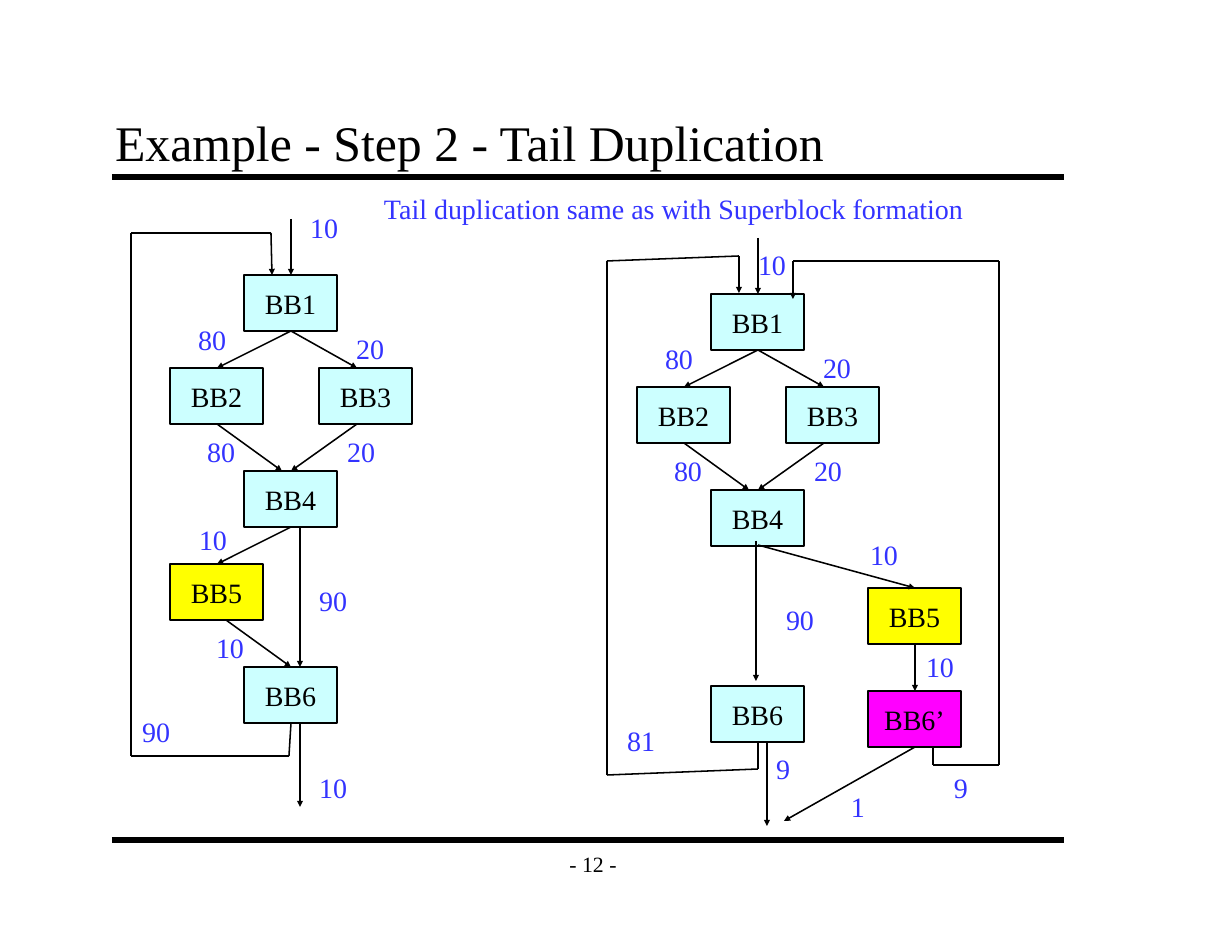
from itertools import pairwise

from lxml import etree
from pptx import Presentation
from pptx.dml.color import RGBColor
from pptx.enum.shapes import MSO_CONNECTOR, MSO_SHAPE
from pptx.enum.text import MSO_ANCHOR, PP_ALIGN
from pptx.oxml.ns import qn
from pptx.util import Pt

RECTANGLE = MSO_SHAPE.RECTANGLE
STRAIGHT = MSO_CONNECTOR.STRAIGHT
LEFT, CENTER = PP_ALIGN.LEFT, PP_ALIGN.CENTER
TOP, MIDDLE, BOTTOM = MSO_ANCHOR.TOP, MSO_ANCHOR.MIDDLE, MSO_ANCHOR.BOTTOM

PX = 914400 // 112
FONT = "Times New Roman"
BLACK, BLUE = "000000", "3333FF"
CYAN, YELLOW, MAGENTA = "CCFFFF", "FFFF00", "FF00FF"
BLOCK_WIDTH, BLOCK_HEIGHT = 93, 56
LABEL_HEIGHT = 45

TITLE = "Example - Step 2 - Tail Duplication"
REMARK = "Tail duplication same as with Superblock formation"
PAGE_NUMBER = "- 12 -"
RULES = [177, 840]

COMMON = {
    "blocks": [
        ("BB1", 244, 275, CYAN),
        ("BB2", 170, 368, CYAN),
        ("BB3", 319, 368, CYAN),
        ("BB4", 244, 471, CYAN),
        ("BB6", 244, 667, CYAN),
    ],
    "routes": [
        [(291, 219), (291, 275)],
        [(291, 331), (217, 368)],
        [(291, 331), (357, 368)],
        [(217, 424), (282, 471)],
        [(357, 424), (291, 471)],
        [(300, 723), (300, 807)],
    ],
    "counts": [
        ("80", 187, 317),
        ("20", 345, 326),
        ("80", 196, 429),
        ("20", 336, 429),
        ("90", 308, 578),
    ],
}
BEFORE = {
    "blocks": [("BB5", 170, 564, YELLOW)],
    "routes": [
        [(291, 527), (217, 564)],
        [(226, 620), (291, 667)],
        [(300, 527), (300, 667)],
        [(291, 723), (289, 756), (131, 756), (131, 233), (271, 233), (272, 275)],
    ],
    "counts": [
        ("10", 299, 205),
        ("10", 188, 517),
        ("10", 205, 625),
        ("90", 131, 709),
        ("10", 308, 765),
    ],
}
AFTER = {
    "blocks": [("BB5", 868, 588, YELLOW), ("BB6’", 868, 691, MAGENTA)],
    "routes": [
        [(758, 545), (915, 588)],
        [(756, 541), (756, 681)],
        [(915, 644), (915, 691)],
        [(915, 747), (784, 821)],
        [(758, 741), (758, 769), (607, 775), (607, 261), (739, 256), (739, 293)],
        [(933, 747), (933, 765), (999, 765), (999, 261), (793, 261), (793, 299)],
    ],
    "counts": [
        ("10", 747, 242),
        ("10", 859, 532),
        ("10", 915, 644),
        ("81", 616, 718),
        ("9", 765, 746),
        ("9", 943, 765),
        ("1", 840, 784),
    ],
}
GRAPHS = [(COMMON, 0, 0), (BEFORE, 0, 0), (COMMON, 467, 19), (AFTER, 0, 0)]


def color(value):
    return RGBColor.from_string(value)


def write(shape, text, size, ink, align, anchor, wrap=False):
    frame = shape.text_frame
    frame.word_wrap = wrap
    frame.vertical_anchor = anchor
    paragraph = frame.paragraphs[0]
    paragraph.alignment = align
    run = paragraph.add_run()
    run.text = text
    run.font.name = FONT
    run.font.size = Pt(size)
    run.font.color.rgb = color(ink)
    return frame


def add_text(slide, text, left, top, width, height, size=18, ink=BLUE,
             align=LEFT, anchor=TOP, wrap=False):
    box = slide.shapes.add_textbox(left * PX, top * PX, width * PX, height * PX)
    return write(box, text, size, ink, align, anchor, wrap)


def add_block(slide, name, left, top, fill):
    block = slide.shapes.add_shape(
        RECTANGLE, left * PX, top * PX, BLOCK_WIDTH * PX, BLOCK_HEIGHT * PX)
    block.shadow.inherit = False
    block.fill.solid()
    block.fill.fore_color.rgb = color(fill)
    block.line.color.rgb = color(BLACK)
    block.line.width = Pt(1)
    write(block, name, 18, BLACK, CENTER, MIDDLE)


def add_line(slide, start, end, weight=1, arrow=False):
    line = slide.shapes.add_connector(
        STRAIGHT, *(value * PX for value in (*start, *end)))
    line.line.color.rgb = color(BLACK)
    line.line.width = Pt(weight)
    if arrow:
        etree.SubElement(line.line._get_or_add_ln(), qn("a:tailEnd"),
                         type="triangle", w="sm", len="sm")
    etree.SubElement(line._element.spPr, qn("a:effectLst"))


def add_graph(slide, graph, dx, dy):
    for name, left, top, fill in graph["blocks"]:
        add_block(slide, name, left + dx, top + dy, fill)
    for route in graph["routes"]:
        points = [(x + dx, y + dy) for x, y in route]
        for start, end in pairwise(points):
            add_line(slide, start, end, arrow=end == points[-1])
    for count, left, top in graph["counts"]:
        width = 24 + 14 * len(count)
        add_text(slide, count, left + dx, top + dy, width, LABEL_HEIGHT)


def main():
    deck = Presentation()
    deck.slide_width, deck.slide_height = 1232 * PX, 952 * PX
    slide = deck.slides.add_slide(deck.slide_layouts[6])
    for y in RULES:
        add_line(slide, (112, y), (1064, y), weight=4)
    headings = [
        add_text(slide, PAGE_NUMBER, 551, 840, 84, 47, 14, BLACK, CENTER, MIDDLE),
        add_text(slide, TITLE, 103, 103, 952, 75, 32, BLACK, LEFT, BOTTOM, True),
    ]
    for frame in headings:
        frame.margin_left = frame.margin_right = 12 * PX
        frame.margin_top = frame.margin_bottom = 7 * PX
    for graph, dx, dy in GRAPHS:
        add_graph(slide, graph, dx, dy)
    add_text(slide, REMARK, 373, 186, 605, LABEL_HEIGHT)
    deck.save("out.pptx")


if __name__ == "__main__":
    main()
